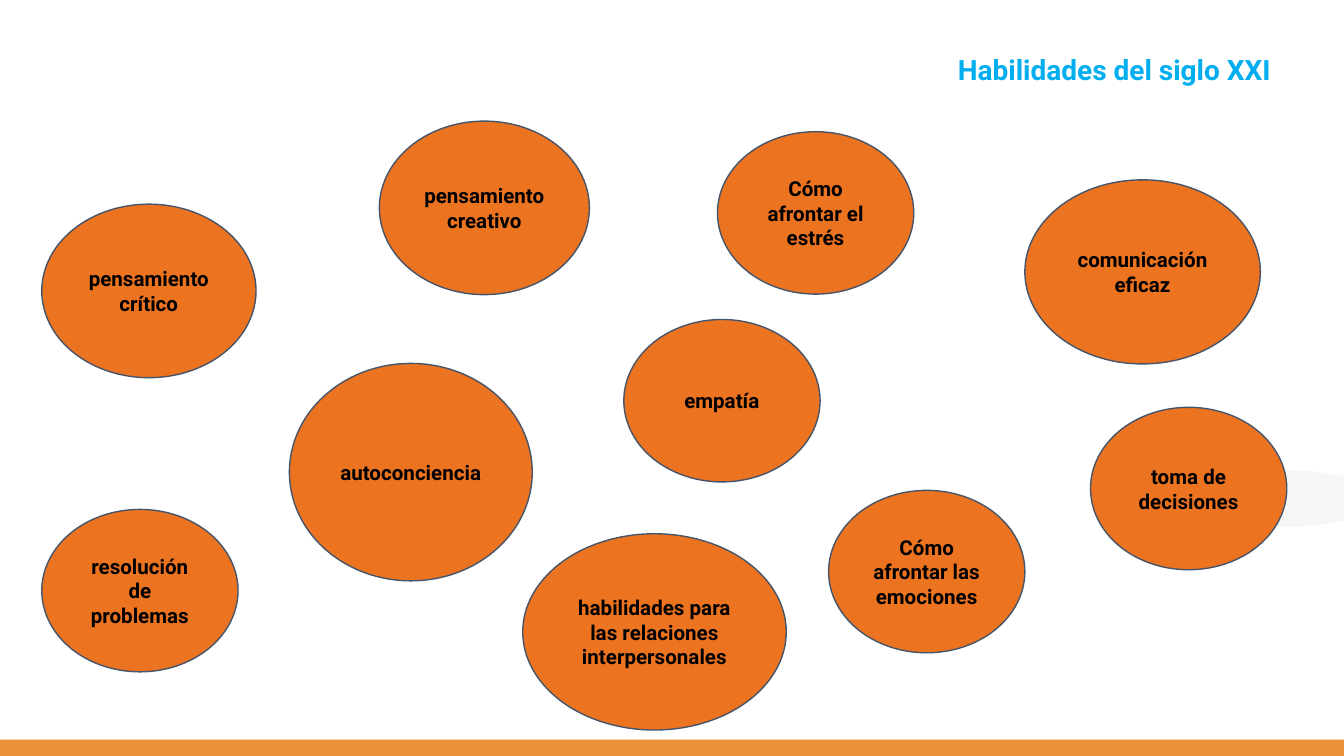
from dataclasses import dataclass

from lxml import etree
from pptx import Presentation
from pptx.dml.color import RGBColor
from pptx.enum.shapes import MSO_SHAPE
from pptx.enum.text import MSO_ANCHOR, MSO_AUTO_SIZE, PP_ALIGN
from pptx.oxml.ns import qn
from pptx.util import Cm, Pt

OVAL, RECT = MSO_SHAPE.OVAL, MSO_SHAPE.RECTANGLE
TOP, MIDDLE = MSO_ANCHOR.TOP, MSO_ANCHOR.MIDDLE
CENTER, RIGHT = PP_ALIGN.CENTER, PP_ALIGN.RIGHT
NO_FIT = MSO_AUTO_SIZE.NONE


@dataclass(frozen=True)
class Theme:
    font: str = "Roboto"
    title: RGBColor = RGBColor(0x00, 0xAE, 0xEF)
    text: RGBColor = RGBColor(0x00, 0x00, 0x00)
    skill: RGBColor = RGBColor(0xEC, 0x73, 0x20)
    edge: RGBColor = RGBColor(0x44, 0x54, 0x6A)
    band: RGBColor = RGBColor(0xEA, 0x91, 0x39)
    shade: RGBColor = RGBColor(0xF5, 0xF5, 0xF5)
    title_size: Pt = Pt(15)
    skill_size: Pt = Pt(11)


theme = Theme()
deck = Presentation()
deck.slide_width, deck.slide_height = Cm(25.4), Cm(14.29)
slide = deck.slides.add_slide(deck.slide_layouts[5])


def add_shape(kind, box, fill):
    shape = slide.shapes.add_shape(kind, *map(Cm, box))
    shape.shadow.inherit = False
    shape.fill.solid()
    shape.fill.fore_color.rgb = fill
    shape.line.fill.background()
    return shape


def set_text(shape, text, size, color, align, anchor, pad):
    frame = shape.text_frame
    frame.text = text
    frame.word_wrap = True
    frame.auto_size = NO_FIT
    frame.vertical_anchor = anchor
    frame.margin_left = frame.margin_right = Cm(0.18)
    frame.margin_top = frame.margin_bottom = Cm(pad)
    para = frame.paragraphs[0]
    para.alignment = align
    para.font.name, para.font.size, para.font.bold = theme.font, size, True
    para.font.color.rgb = color
    return para


# Backdrop: pale ellipse at the right edge and band at the foot
shade = add_shape(OVAL, (22.43, 8.89, 3.66, 1.07), theme.shade)
color = shade.fill._xPr.find(qn("a:solidFill"))[0]
etree.SubElement(color, qn("a:alpha"), val="89000")
add_shape(RECT, (0, 13.98, 25.4, 0.31), theme.band)

# Title
title = slide.shapes.title
title.left, title.top = Cm(6.12), Cm(0.97)
title.width, title.height = Cm(18.08), Cm(1.75)
para = set_text(title, "Habilidades del siglo XXI", theme.title_size,
                theme.title, RIGHT, TOP, 0.1)
para.line_spacing = 0.9

# Skills: text, left, top and, where not the usual size, width and height
usual = (3.71, 3.07)
skills = [
    ("Cómo afrontar el estrés", 13.56, 2.49, *usual),
    ("comunicación eficaz", 19.37, 3.4, 4.45, 3.48),
    ("habilidades para las relaciones interpersonales", 9.88, 10.09, 4.98, 3.71),
    ("resolución de problemas", 0.79, 9.63, *usual),
    ("toma de decisiones", 20.61, 7.7, *usual),
    ("pensamiento creativo", 7.17, 2.29, 3.97, 3.28),
    ("pensamiento crítico", 0.79, 3.86, 4.05, 3.28),
    ("empatía", 11.79, 6.04, *usual),
    ("autoconciencia", 5.47, 6.87, 4.59, 4.11),
    ("Cómo afrontar las emociones", 15.66, 9.27, *usual),
]
for text, *box in skills:
    oval = add_shape(OVAL, box, theme.skill)
    oval.line.color.rgb = theme.edge
    oval.line.width = Pt(0.75)
    set_text(oval, text, theme.skill_size, theme.text, CENTER, MIDDLE, 0.18)

deck.save("out.pptx")
